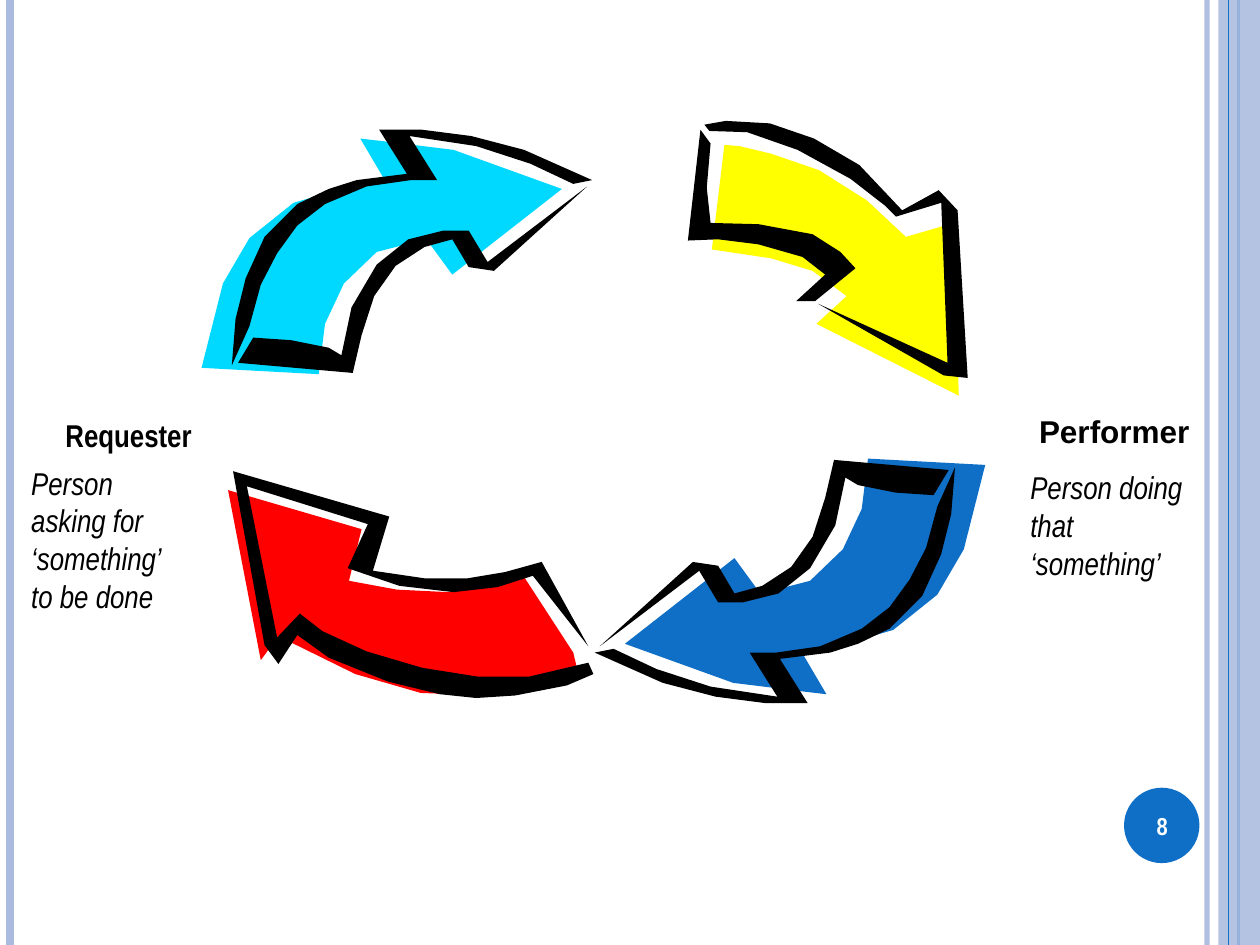
from pptx import Presentation
from pptx.dml.color import RGBColor
from pptx.enum.shapes import MSO_CONNECTOR, MSO_SHAPE
from pptx.enum.text import MSO_ANCHOR, MSO_AUTO_SIZE, PP_ALIGN
from pptx.oxml.ns import qn
from pptx.oxml.xmlchemy import OxmlElement
from pptx.util import Cm, Pt

STRAIGHT = MSO_CONNECTOR.STRAIGHT
RECT, OVAL = MSO_SHAPE.RECTANGLE, MSO_SHAPE.OVAL
TOP, MIDDLE = MSO_ANCHOR.TOP, MSO_ANCHOR.MIDDLE
LEFT, CENTER, RIGHT = PP_ALIGN.LEFT, PP_ALIGN.CENTER, PP_ALIGN.RIGHT
GROW, FIXED = MSO_AUTO_SIZE.SHAPE_TO_FIT_TEXT, MSO_AUTO_SIZE.NONE

WIDTH, HEIGHT = 25.4, 19.05
UNIT = Cm(0.0254)  # one step of the arrow outlines
BLACK, WHITE, BLUE, PALE = "000000", "FFFFFF", "0F6FC6", "ABBBDF"

# Arrow outlines: body, then the black edges
CYAN_BODY = [
    (471, 145), (385, 114), (328, 107), (311, 105), (331, 139), (296, 145),
    (258, 156), (223, 184), (202, 220), (185, 287), (278, 292), (283, 252),
    (298, 220), (324, 195), (351, 188), (365, 187), (384, 213)]
CYAN_EDGES = [
    [(466, 148), (392, 215), (372, 212), (359, 190), (337, 196), (314, 211),
     (297, 235), (287, 266), (280, 296), (189, 288), (201, 268), (231, 270),
     (261, 276), (271, 282), (279, 244), (299, 210), (324, 190), (352, 183),
     (372, 183), (387, 208)],
    [(455, 146), (421, 130), (378, 116), (325, 108), (347, 143), (326, 143),
     (291, 148), (258, 162), (236, 179), (220, 201), (207, 226), (198, 259),
     (184, 290), (187, 253), (195, 221), (210, 188), (236, 162), (261, 150),
     (283, 143), (323, 138), (301, 103), (335, 103), (374, 108), (416, 119),
     (470, 143)]]
YELLOW_BACK = [
    (566, 98), (605, 102), (643, 116), (682, 139), (712, 169), (750, 157),
    (754, 294), (641, 238), (665, 215), (638, 196), (605, 185), (554, 184),
    (557, 101)]
YELLOW_BODY = [
    (587, 116), (612, 122), (650, 135), (688, 159), (719, 188), (757, 177),
    (761, 314), (648, 257), (672, 235), (645, 215), (612, 205), (565, 198),
    (575, 115)]
YELLOW_EDGES = [
    [(768, 300), (760, 167), (745, 151), (716, 167), (682, 131), (646, 110),
     (611, 98), (576, 96), (559, 99), (563, 104), (593, 105), (633, 119),
     (675, 142), (702, 163), (711, 172), (747, 161), (752, 288), (649, 241),
     (749, 298)],
    [(679, 213), (647, 239), (632, 239), (655, 218), (637, 204), (602, 194),
     (570, 190), (546, 191), (556, 103), (564, 114), (561, 149), (564, 177),
     (602, 178), (645, 186), (667, 200)]]
RED_BODY = [
    (428, 451), (368, 463), (327, 461), (289, 454), (299, 413), (193, 382),
    (219, 517), (233, 498), (294, 528), (346, 543), (400, 545), (472, 532),
    (467, 511)]
RED_EDGES = [
    [(467, 526), (420, 537), (379, 537), (335, 530), (291, 517), (256, 501),
     (238, 487), (220, 506), (196, 386), (292, 416), (276, 451), (317, 465),
     (360, 470), (395, 466), (423, 457), (467, 513), (430, 446), (401, 454),
     (371, 459), (337, 459), (296, 453), (309, 410), (185, 374), (210, 512),
     (221, 527), (236, 504), (261, 522), (308, 541), (349, 551), (378, 554),
     (409, 552), (450, 544), (471, 535)]]


def rgb(color):
    return RGBColor.from_string(color)


def shifted(points, dx, dy):
    return [(x + dx, y + dy) for x, y in points]


def half_turn(points):
    return [(942 - x, 661 - y) for x, y in points]


def set_opacity(sp, percent):
    for clr in sp._element.iter(qn("a:srgbClr")):
        alpha = OxmlElement("a:alpha")
        alpha.set("val", str(percent * 1000))
        clr.append(alpha)


def paint(sp, color):
    sp.shadow.inherit = False
    sp.fill.solid()
    sp.fill.fore_color.rgb = rgb(color)
    sp.line.fill.background()


def add_shape(s, kind, x, y, w, h, color):
    sp = s.shapes.add_shape(kind, Cm(x), Cm(y), Cm(w), Cm(h))
    paint(sp, color)
    return sp


def add_rule(s, x, color, width):
    sp = s.shapes.add_connector(STRAIGHT, Cm(x), 0, Cm(x), Cm(HEIGHT))
    sp.line.color.rgb = rgb(color)
    sp.line.width = Pt(width)
    sp._element.spPr.append(OxmlElement("a:effectLst"))
    return sp


def add_arrow(s, back, body, edges, color):
    group = s.shapes.add_group_shape()
    layers = [(back, WHITE), (body, color)] + [(edge, BLACK) for edge in edges]
    for points, fill in layers:
        builder = group.shapes.build_freeform(*points[0], scale=UNIT)
        builder.add_line_segments(points[1:], close=True)
        paint(builder.convert_to_shape(), fill)


def add_text(s, x, y, w, h, text, align=LEFT, anchor=TOP, auto_size=GROW,
             color=BLACK, **font):
    tf = s.shapes.add_textbox(Cm(x), Cm(y), Cm(w), Cm(h)).text_frame
    tf.word_wrap = True
    tf.auto_size = auto_size
    tf.vertical_anchor = anchor
    p = tf.paragraphs[0]
    p.alignment = align
    r = p.add_run()
    r.text = text
    r.font.color.rgb = rgb(color)
    for name, value in ({"name": "Arial Narrow", "size": Pt(18)} | font).items():
        setattr(r.font, name, value)


def add_frame(s):
    set_opacity(add_rule(s, 24.33, PALE, 3), 93)
    add_rule(s, 0.2, PALE, 4.5)
    add_rule(s, 24.97, BLUE, 1.5)
    set_opacity(add_shape(s, RECT, 24.56, 0, 0.84, HEIGHT, PALE), 87)
    add_rule(s, 24.77, BLUE, 0.75)
    # Page number
    add_shape(s, OVAL, 22.66, 15.88, 1.52, 1.52, BLUE)
    add_text(s, 22.58, 15.93, 1.7, 1.45, "8", CENTER, MIDDLE, FIXED, WHITE,
             size=Pt(14), bold=True)


def main():
    prs = Presentation()
    prs.slide_width, prs.slide_height = Cm(WIDTH), Cm(HEIGHT)
    s = prs.slides.add_slide(prs.slide_layouts[6])
    add_frame(s)

    # Cycle of arrows; the blue one is the cyan one turned by half
    cyan_front = shifted(CYAN_BODY, -25, 5)
    add_arrow(s, YELLOW_BACK, YELLOW_BODY, YELLOW_EDGES, "FFFF00")
    add_arrow(s, CYAN_BODY, cyan_front, CYAN_EDGES, "00D9FF")
    add_arrow(s, half_turn(CYAN_BODY), half_turn(cyan_front),
              [half_turn(edge) for edge in CYAN_EDGES], BLUE)
    add_arrow(s, RED_BODY, shifted(RED_BODY, -12, 7), RED_EDGES, "FF0000")

    # Roles
    add_text(s, 18.95, 8.18, 5.28, 1.27, "Performer", RIGHT,
             name="Arial", bold=True)
    add_text(s, 1.07, 8.26, 5.28, 1.02, "Requester", bold=True)
    add_text(s, 0.38, 9.22, 3.61, 3.33,
             "Person asking for ‘something’ to be done", italic=True)
    add_text(s, 20.52, 9.32, 3.61, 2.57,
             "Person doing that ‘something’", italic=True)
    prs.save("out.pptx")


if __name__ == "__main__":
    main()
